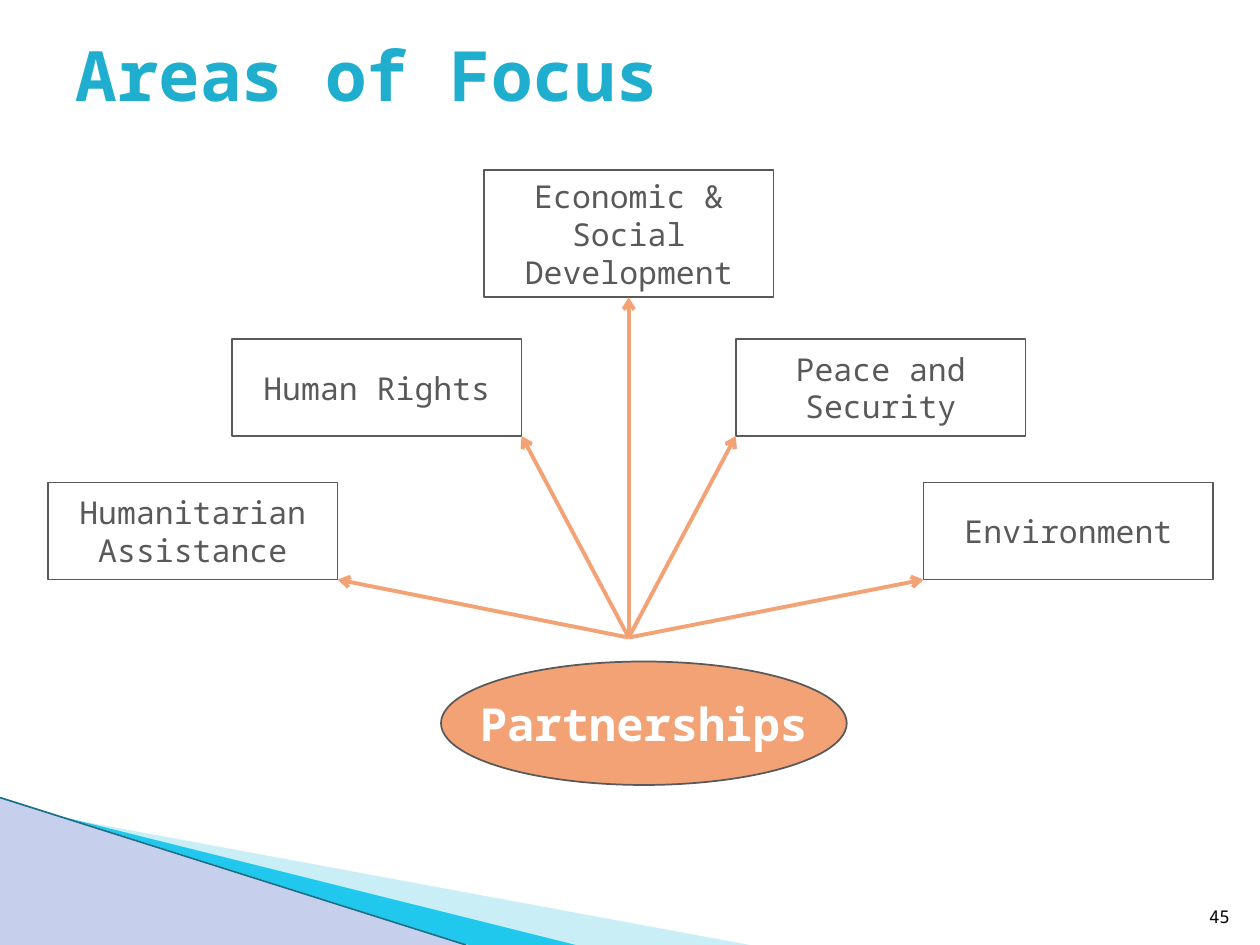
from lxml import etree
from pptx import Presentation
from pptx.dml.color import RGBColor
from pptx.enum.shapes import MSO_CONNECTOR, MSO_SHAPE
from pptx.enum.text import MSO_ANCHOR, PP_ALIGN
from pptx.oxml.ns import qn
from pptx.util import Emu, Inches, Pt

RECTANGLE, OVAL, RIGHT_TRIANGLE = MSO_SHAPE.RECTANGLE, MSO_SHAPE.OVAL, MSO_SHAPE.RIGHT_TRIANGLE
STRAIGHT = MSO_CONNECTOR.STRAIGHT
MIDDLE, TOP, BOTTOM = MSO_ANCHOR.MIDDLE, MSO_ANCHOR.TOP, MSO_ANCHOR.BOTTOM
LEFT, CENTER, RIGHT = PP_ALIGN.LEFT, PP_ALIGN.CENTER, PP_ALIGN.RIGHT

WHITE = RGBColor(0xFF, 0xFF, 0xFF)
BLACK = RGBColor(0, 0, 0)
GRAY = RGBColor(0x59, 0x59, 0x59)
ORANGE = RGBColor(0xF3, 0xA2, 0x76)
TITLE_BLUE = RGBColor(0x1F, 0xAE, 0xCD)
PALE_CYAN = RGBColor(0x78, 0xD6, 0xEA)
CYAN = RGBColor(0x1F, 0xC8, 0xEC)
INDIGO = RGBColor(0x25, 0x4B, 0xBA)
TEAL = RGBColor(0x1A, 0x70, 0x88)

FONT = "Noto Sans Mono"
WIDTH, HEIGHT = 10, 7.5
BOX_WIDTH, BOX_HEIGHT = 2.3, 0.77
HUB = (4.99, 5.06)
UPPER_ROW, LOWER_ROW = 2.69, 3.83
SIDE_AREAS = [
    ("Humanitarian Assistance", 0.38, LOWER_ROW),
    ("Human Rights", 1.84, UPPER_ROW),
    ("Peace and Security", 5.84, UPPER_ROW),
    ("Environment", 7.33, LOWER_ROW),
]


def inches(*lengths):
    """Convert several lengths from inches."""
    return [Inches(length) for length in lengths]


def write(frame, lines, size, color, align=CENTER, anchor=MIDDLE, bold=False):
    """Write lines as runs of one paragraph."""
    frame.vertical_anchor = anchor
    paragraph = frame.paragraphs[0]
    paragraph.alignment = align
    for index, line in enumerate(lines):
        if index:
            paragraph.add_line_break()
        run = paragraph.add_run()
        run.text = line
        run.font.name, run.font.size, run.font.bold = FONT, Pt(size), bold
        run.font.color.rgb = color
    return paragraph


def paint(shape, fill, opacity=100):
    """Give a shape a flat fill without outline or shadow."""
    shape.shadow.inherit = False
    shape.fill.solid()
    shape.fill.fore_color.rgb = fill
    shape.line.fill.background()
    if opacity < 100:
        tint = shape.fill._xPr.find(qn("a:solidFill"))[0]
        etree.SubElement(tint, qn("a:alpha"), val=str(opacity * 1000))


def add_node(slide, preset, place, fill, lines, size, color, bold=False, wrap=True):
    """Add an outlined shape with centred text."""
    node = slide.shapes.add_shape(preset, *inches(*place))
    paint(node, fill)
    node.line.color.rgb, node.line.width = GRAY, Pt(1)
    node.text_frame.word_wrap = wrap
    write(node.text_frame, lines, size, color, bold=bold)
    return node


def add_line(slide, start, end, color, width, arrow=False):
    """Add a straight line, with an open arrowhead at its end if asked."""
    line = slide.shapes.add_connector(STRAIGHT, *inches(*start, *end))
    line.line.color.rgb, line.line.width = color, Pt(width)
    if arrow:
        etree.SubElement(line.line._get_or_add_ln(), qn("a:tailEnd"), type="arrow")
    etree.SubElement(line._element.spPr, qn("a:effectLst"))
    return line


def add_wedge(slide, points, fill, opacity=100):
    """Add a filled polygon through the given points."""
    corners = [inches(*point) for point in points]
    builder = slide.shapes.build_freeform(*corners[0], scale=1.0)
    builder.add_line_segments(corners[1:], close=True)
    paint(builder.convert_to_shape(), fill, opacity)


def add_corner(slide):
    """Draw the layered wedges in the bottom left corner."""
    add_wedge(slide, [(0.55, 6.5), (5.95, HEIGHT), (4.56, HEIGHT)], PALE_CYAN, 40)
    add_wedge(slide, [(0.53, 6.49), (4.57, HEIGHT), (3.72, HEIGHT)], CYAN)
    triangle = slide.shapes.add_shape(RIGHT_TRIANGLE, *inches(0, 6.33, 3.7, HEIGHT - 6.33))
    paint(triangle, INDIGO, 26)
    add_line(slide, (0, 6.33), (3.7, HEIGHT), TEAL, 0.95)


def add_title(slide):
    """Place and fill the title."""
    title = slide.shapes.title
    title.left, title.top, title.width, title.height = inches(0.5, 0.3, 9, 1.25)
    title.text_frame.margin_top = Inches(0.03)
    heading = write(title.text_frame, ["Areas of Focus"], 39.6, TITLE_BLUE, LEFT, TOP, True)
    heading.line_spacing = 0.9


def add_page_number(slide):
    """Add the page number at the bottom right."""
    number = slide.shapes.add_textbox(*inches(9.36, 7.01, 0.5, 0.4))
    number.text_frame.word_wrap = True
    write(number.text_frame, ["45"], 10, BLACK, RIGHT, BOTTOM)


def add_areas(slide):
    """Add the partnership hub, the focus areas and the arrows to them."""
    add_node(slide, OVAL, (3.5, 5.25, 3.22, 0.98), ORANGE, ["Partnerships"], 26, WHITE,
             bold=True, wrap=False)
    for name, left, top in SIDE_AREAS:
        add_node(slide, RECTANGLE, (left, top, BOX_WIDTH, BOX_HEIGHT), WHITE, [name], 18, GRAY)
        near_side = left + BOX_WIDTH if left < HUB[0] else left
        add_line(slide, HUB, (near_side, top + BOX_HEIGHT), ORANGE, 2.25, arrow=True)
    development = add_node(slide, RECTANGLE, (HUB[0] - BOX_WIDTH / 2, 1.35, BOX_WIDTH, 1.01),
                           WHITE, ["Economic & Social", "Development"], 18, GRAY)
    upward = add_line(slide, HUB, (HUB[0], 2.36), ORANGE, 2.25, arrow=True)
    upward.end_connect(development, 2)


def main():
    """Build and save the slide."""
    deck = Presentation()
    deck.slide_width, deck.slide_height = inches(WIDTH, HEIGHT)
    slide = deck.slides.add_slide(deck.slide_layouts[5])
    add_corner(slide)
    add_title(slide)
    add_page_number(slide)
    add_areas(slide)
    deck.save("out.pptx")


if __name__ == "__main__":
    main()
